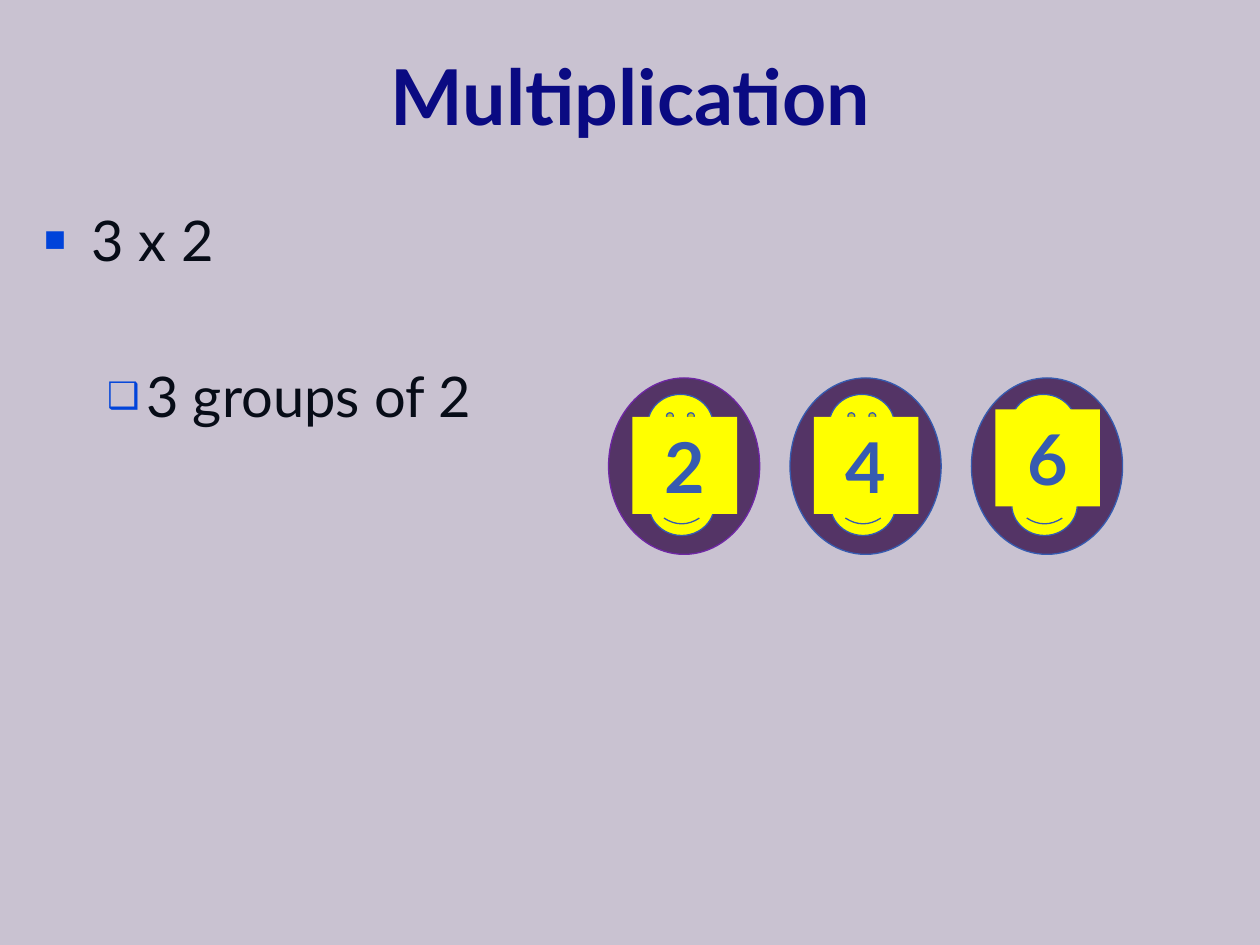
import pptx
import pptx.util
import pptx.dml.color
import pptx.enum.shapes
import pptx.enum.text
import pptx.oxml.ns
from lxml import etree

COLORS = {
    "background": "C9C2D1", "title": "0A0A82", "text": "070C17", "bullet": "0043DA",
    "plate": "543466", "first rim": "6F27A5", "blue": "365BB0", "yellow": "FFFF00",
}
FONT = "Lato"
TITLE = "Multiplication"
# text, level, bullet, left margin, hanging indent (inches), space before (points)
POINTS = [
    ("3 x 2", 0, "■", 0.38, 0.38, 0),
    ("3 groups of 2", 1, "❑", 0.81, 0.31, 51),
]
# running total, rim colour, top of its card
GROUPS = [("2", "first rim", 3.31), ("4", "blue", 3.31), ("6", "blue", 3.25)]

SLIDE_W, SLIDE_H = 10, 7.5
PLATE_LEFT, PLATE_TOP, PLATE_PITCH = 4.83, 3, 1.44
PLATE_SIZE, FACE_SIZE, CARD_SIZE = (1.2, 1.4), (0.52, 0.49), (0.83, 0.77)
FACE_OFFSETS = [(0.31, 0.13), (0.32, 0.76)]
CARD_OFFSET = 0.19

SHAPE = pptx.enum.shapes.MSO_SHAPE
ALIGN = pptx.enum.text.PP_ALIGN
ANCHOR = pptx.enum.text.MSO_ANCHOR


def rgb(name):
    return pptx.dml.color.RGBColor.from_string(COLORS[name])


def place(item, left, top, width, height):
    item.left, item.top, item.width, item.height = map(
        pptx.util.Inches, (left, top, width, height))


def style(paragraph, size, color, bold=False):
    for run in paragraph.runs:
        run.font.name, run.font.size, run.font.bold = FONT, pptx.util.Pt(size), bold
        run.font.color.rgb = rgb(color)


def add_bullet(paragraph, char, margin, hanging):
    props = paragraph._p.get_or_add_pPr()
    props.set("marL", str(pptx.util.Inches(margin)))
    props.set("indent", str(-pptx.util.Inches(hanging)))
    qn = pptx.oxml.ns.qn
    color = etree.SubElement(props, qn("a:buClr"))
    etree.SubElement(color, qn("a:srgbClr"), val=COLORS["bullet"])
    etree.SubElement(props, qn("a:buSzPct"), val="65000")
    etree.SubElement(props, qn("a:buChar"), char=char)


def add_filled(shapes, kind, left, top, size, fill, line=None):
    shape = shapes.add_shape(kind, *map(pptx.util.Inches, (left, top, *size)))
    shape.shadow.inherit = False
    shape.fill.solid()
    shape.fill.fore_color.rgb = rgb(fill)
    if line:
        shape.line.color.rgb = rgb(line)
        shape.line.width = pptx.util.Pt(0.75)
    else:
        shape.line.fill.background()
    return shape


def main():
    deck = pptx.Presentation()
    deck.slide_width = pptx.util.Inches(SLIDE_W)
    deck.slide_height = pptx.util.Inches(SLIDE_H)
    slide = deck.slides.add_slide(deck.slide_layouts[1])
    slide.background.fill.solid()
    slide.background.fill.fore_color.rgb = rgb("background")

    title, body = slide.placeholders
    place(title, 0.17, 0.17, 9.67, 1.17)
    title.text_frame.text = TITLE
    title.text_frame.vertical_anchor = ANCHOR.MIDDLE
    title.text_frame.paragraphs[0].alignment = ALIGN.CENTER
    style(title.text_frame.paragraphs[0], 44, "title", bold=True)

    place(body, 0.25, 1.58, 9.5, 3.67)
    body.text_frame.text = "\n".join(point[0] for point in POINTS)
    body.text_frame.auto_size = pptx.enum.text.MSO_AUTO_SIZE.NONE
    for paragraph, (_, level, char, margin, hanging, gap) in zip(
            body.text_frame.paragraphs, POINTS):
        paragraph.level = level
        paragraph.space_before = pptx.util.Pt(gap)
        add_bullet(paragraph, char, margin, hanging)
        style(paragraph, 32, "text")

    plate_lefts = [PLATE_LEFT + i * PLATE_PITCH for i in range(len(GROUPS))]
    for left, (_, rim, _) in zip(plate_lefts, GROUPS):
        members = slide.shapes.add_group_shape().shapes
        add_filled(members, SHAPE.OVAL, left, PLATE_TOP, PLATE_SIZE, "plate", rim)
        for dx, dy in FACE_OFFSETS:
            add_filled(members, SHAPE.SMILEY_FACE, left + dx, PLATE_TOP + dy,
                       FACE_SIZE, "yellow", "blue")

    for left, (total, _, top) in zip(plate_lefts, GROUPS):
        card = add_filled(slide.shapes, SHAPE.RECTANGLE, left + CARD_OFFSET, top,
                          CARD_SIZE, "yellow")
        card.text_frame.text = total
        card.text_frame.paragraphs[0].alignment = ALIGN.CENTER
        style(card.text_frame.paragraphs[0], 40, "blue", bold=True)

    deck.save("out.pptx")


if __name__ == "__main__":
    main()
